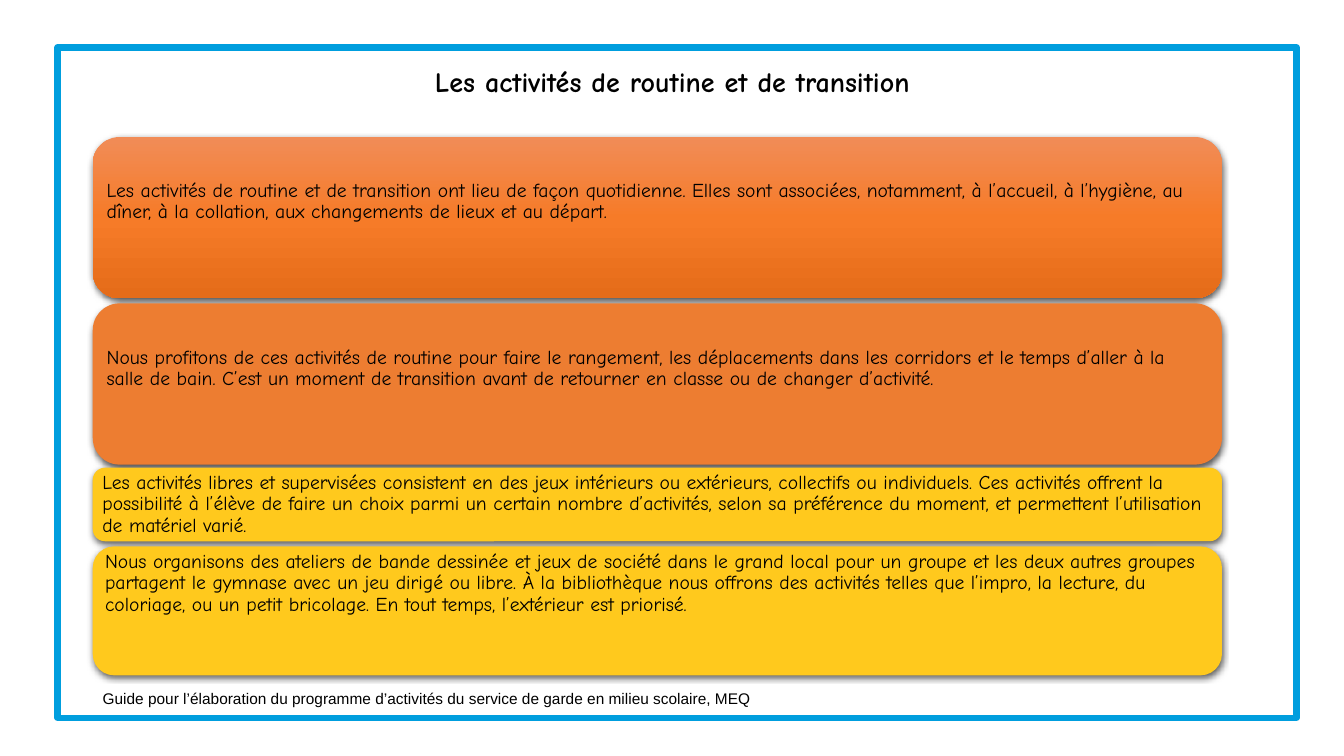
from dataclasses import dataclass

from lxml.etree import SubElement
from pptx import Presentation
from pptx.dml.color import RGBColor
from pptx.enum.shapes import MSO_SHAPE as Shape
from pptx.enum.text import MSO_ANCHOR as Anchor, PP_ALIGN as Align
from pptx.oxml.ns import qn
from pptx.util import Emu, Pt

PX = 9144  # 100 px to the inch
COLORS = {
    "black": "000000",
    "frame": "009EDE",
    "orange light": "F18C57",
    "orange vivid": "F67B28",
    "orange deep": "E56C19",
    "orange": "ED7D31",
    "yellow": "FFC91D",
}
HAND_FONT = "Comic Neue"
CARD_LEFT, CARD_WIDTH, CARD_INSET = 92, 1120, 6


@dataclass(frozen=True)
class Card:
    top: int
    height: int
    fills: tuple[str, ...]
    bottom_inset: int
    text: str


CARDS = (
    Card(136, 160, ("orange light", "orange vivid", "orange deep"), 37,
         "Les activités de routine et de transition ont lieu de façon quotidienne. "
         "Elles sont associées, notamment, à l’accueil, à l’hygiène, au dîner, à la "
         "collation, aux changements de lieux et au départ."),
    Card(301, 160, ("orange",), 37,
         "Nous profitons de ces activités de routine pour faire le rangement, les "
         "déplacements dans les corridors et le temps d’aller à la salle de bain. "
         "C’est un moment de transition avant de retourner en classe ou de changer "
         "d’activité."),
    Card(464, 73, ("yellow",), CARD_INSET,
         "Les activités libres et supervisées consistent en des jeux intérieurs ou "
         "extérieurs, collectifs ou individuels. Ces activités offrent la possibilité "
         "à l’élève de faire un choix parmi un certain nombre d’activités, selon sa "
         "préférence du moment, et permettent l’utilisation de matériel varié."),
    Card(542, 128, ("yellow",), 60,
         "Nous organisons des ateliers de bande dessinée et jeux de société dans le "
         "grand local pour un groupe et les deux autres groupes partagent le gymnase "
         "avec un jeu dirigé ou libre. À la bibliothèque nous offrons des activités "
         "telles que l’impro, la lecture, du coloriage, ou un petit bricolage. En tout "
         "temps, l’extérieur est priorisé."),
)


def box(left: int, top: int, width: int, height: int) -> tuple[Emu, ...]:
    return tuple(Emu(length * PX) for length in (left, top, width, height))


def rgb(name: str) -> RGBColor:
    return RGBColor.from_string(COLORS[name])


def write(frame, text: str, *, size: int, font: str = HAND_FONT, bold: bool = False,
          align: Align = Align.LEFT, anchor: Anchor = Anchor.MIDDLE,
          spacing: float = 0.9) -> None:
    frame.word_wrap = True
    frame.vertical_anchor = anchor
    paragraph = frame.paragraphs[0]
    paragraph.alignment = align
    paragraph.line_spacing = spacing
    run = paragraph.add_run()
    run.text = text
    run.font.name = font
    run.font.size = Pt(size)
    run.font.bold = bold
    run.font.color.rgb = rgb("black")


def add_color(parent, name: str):
    return SubElement(parent, qn("a:srgbClr"), val=COLORS[name])


def paint(shape, fills: tuple[str, ...]) -> None:
    """Fill with one colour, or with an even top-to-bottom gradient."""
    if len(fills) == 1:
        shape.fill.solid()
        shape.fill.fore_color.rgb = rgb(fills[0])
        return
    shape.fill.gradient()
    shape.fill.gradient_angle = 270
    stops = next(shape.element.spPr.iter(qn("a:gsLst")))
    for stop in list(stops):
        stops.remove(stop)
    for index, name in enumerate(fills):
        position = 100000 * index // (len(fills) - 1)
        add_color(SubElement(stops, qn("a:gs"), pos=str(position)), name)


def cast_shadow(shape) -> None:
    shape.shadow.inherit = False
    effects = shape.element.spPr.find(qn("a:effectLst"))
    shadow = SubElement(effects, qn("a:outerShdw"), blurRad=str(Pt(4.5)),
                        dist=str(Pt(1.5)), dir="5400000", algn="ctr", rotWithShape="0")
    SubElement(add_color(shadow, "black"), qn("a:alpha"), val="63000")


def add_card(slide, card: Card) -> None:
    shape = slide.shapes.add_shape(
        Shape.ROUNDED_RECTANGLE, *box(CARD_LEFT, card.top, CARD_WIDTH, card.height))
    paint(shape, card.fills)
    shape.line.fill.background()
    cast_shadow(shape)
    frame = shape.text_frame
    frame.margin_left = frame.margin_right = frame.margin_top = Emu(CARD_INSET * PX)
    frame.margin_bottom = Emu(card.bottom_inset * PX)
    write(frame, card.text, size=14)


def add_border(slide) -> None:
    border = slide.shapes.add_shape(Shape.RECTANGLE, *box(57, 47, 1229, 665))
    border.fill.background()
    border.line.color.rgb = rgb("frame")
    border.line.width = Pt(4.5)
    border.shadow.inherit = False


def main() -> None:
    deck = Presentation()
    deck.slide_width, deck.slide_height = Emu(1333 * PX), Emu(750 * PX)
    slide = deck.slides.add_slide(deck.slide_layouts[5])
    add_border(slide)

    title = slide.shapes.title
    title.left, title.top, title.width, title.height = box(92, 40, 1150, 86)
    write(title.text_frame, "Les activités de routine et de transition",
          size=20, bold=True, align=Align.CENTER)

    for card in CARDS:
        add_card(slide, card)

    credit = slide.shapes.add_textbox(*box(92, 679, 1046, 29))
    write(credit.text_frame,
          "Guide pour l’élaboration du programme d’activités du service de garde "
          "en milieu scolaire, MEQ",
          size=11, font="Arial", anchor=Anchor.TOP, spacing=1.0)
    deck.save("out.pptx")


if __name__ == "__main__":
    main()
